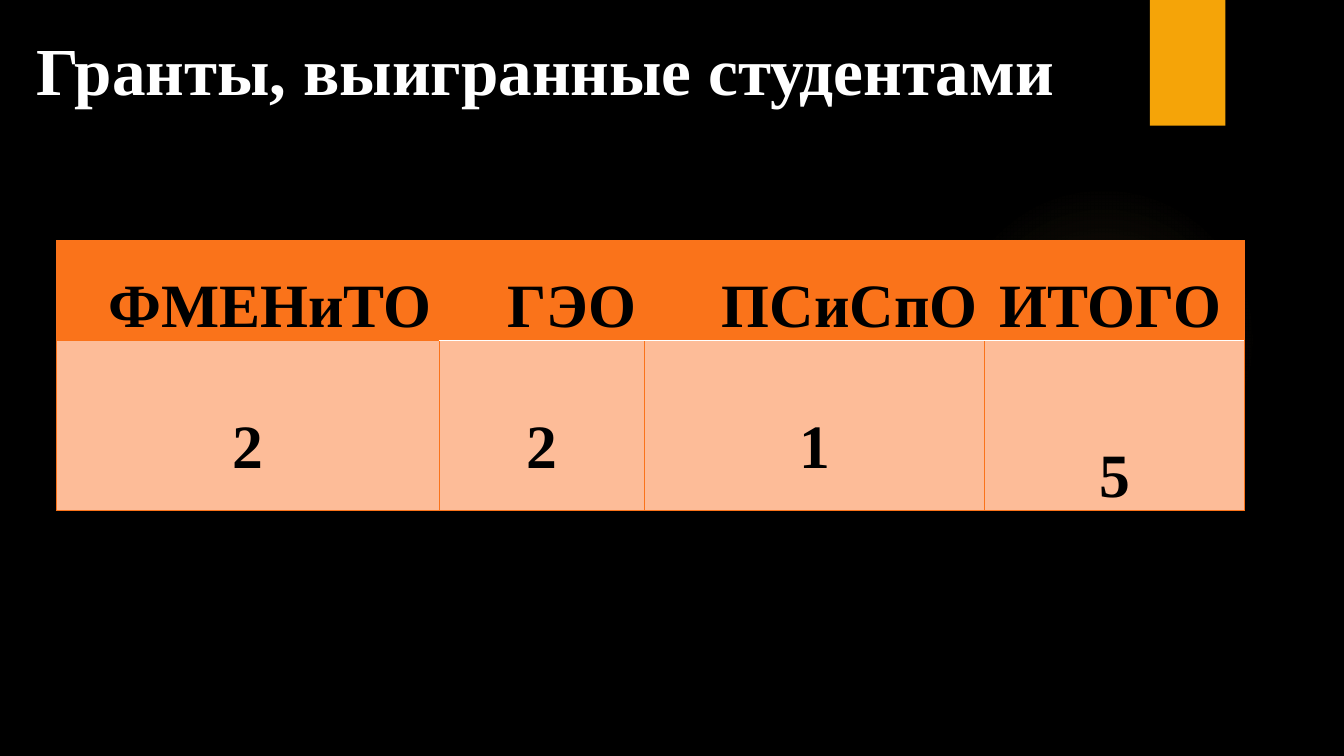
from dataclasses import dataclass
from typing import Any

from lxml.etree import SubElement
from pptx import Presentation
from pptx.dml.color import RGBColor
from pptx.enum.shapes import MSO_SHAPE as Preset
from pptx.enum.text import MSO_ANCHOR as Anchor, PP_ALIGN as Align
from pptx.oxml.ns import qn
from pptx.util import Cm, Pt

FONT = "Times New Roman"
ORANGE, PEACH, AMBER, GLOW = "FA731A", "FDBC98", "F5A408", "FAC96A"
BLACK, WHITE = "000000", "FFFFFF"


@dataclass
class GrantColumn:
    heading: str
    count: str
    width: float
    rule: tuple[str, float] = (WHITE, 1.5)
    lift: float = 0.73


COLUMNS = [
    GrantColumn("ФМЕНиТО", "2", 9.65, rule=(ORANGE, 0.75)),
    GrantColumn("ГЭО", "2", 5.16),
    GrantColumn("ПСиСпО", "1", 8.59),
    GrantColumn("ИТОГО ", "5", 6.53, lift=0),
]
ROW_HEIGHTS = [2.51, 4.29]


def colour(value: str) -> RGBColor:
    return RGBColor.from_string(value)


def apply(target: Any, values: dict[str, Any]) -> None:
    for name, value in values.items():
        setattr(target, name, value)


def write(frame: Any, text: str, size: float, ink: str, layout: dict[str, Any]) -> None:
    para = frame.paragraphs[0]
    apply(para, layout)
    span = para.add_run()
    span.text = text
    apply(span.font, {"name": FONT, "size": Pt(size), "bold": True})
    span.font.color.rgb = colour(ink)


def add_plain_shape(page: Any, preset: Any, left: float, top: float,
                    width: float, height: float) -> Any:
    shape = page.shapes.add_shape(preset, Cm(left), Cm(top), Cm(width), Cm(height))
    shape.shadow.inherit = False
    shape.line.fill.background()
    return shape


def add_glow(page: Any) -> None:
    glow = add_plain_shape(page, Preset.OVAL, 23.9, 4.65, 7.82, 7.82)
    glow.fill.gradient()
    gradient = glow.element.spPr.find(qn("a:gradFill"))
    for child in list(gradient):
        gradient.remove(child)
    stops = SubElement(gradient, qn("a:gsLst"))
    for position, alpha in ((0, 7), (36, 6), (69, 0)):
        stop = SubElement(stops, qn("a:gs"), pos=str(position * 1000))
        tone = SubElement(stop, qn("a:srgbClr"), val=GLOW)
        SubElement(tone, qn("a:alpha"), val=str(alpha * 1000))
    circle = SubElement(gradient, qn("a:path"), path="circle")
    SubElement(circle, qn("a:fillToRect"), {side: "50000" for side in "ltrb"})


def set_borders(cell: Any, **special: tuple[str, float]) -> None:
    properties = cell._tc.get_or_add_tcPr()
    for side in "LRTB":
        ink, width = special.get(side, (ORANGE, 0.75))
        line = SubElement(properties, qn(f"a:ln{side}"), w=str(Pt(width)))
        fill = SubElement(line, qn("a:solidFill"))
        SubElement(fill, qn("a:srgbClr"), val=ink)


def fill_cell(cell: Any, text: str, back: str, align: Any, lift: float = 0) -> None:
    cell.fill.solid()
    cell.fill.fore_color.rgb = colour(back)
    apply(cell, {"vertical_anchor": Anchor.BOTTOM, "margin_left": Cm(0.18),
                 "margin_right": Cm(0.18), "margin_top": 0, "margin_bottom": Cm(lift)})
    write(cell.text_frame, text, 44, BLACK, {"alignment": align, "line_spacing": 1.07})


def add_grants_table(page: Any) -> None:
    width = sum(column.width for column in COLUMNS)
    table = page.shapes.add_table(len(ROW_HEIGHTS), len(COLUMNS), Cm(1.42), Cm(6.07),
                                  Cm(width), Cm(sum(ROW_HEIGHTS))).table
    for row, height in zip(table.rows, ROW_HEIGHTS):
        row.height = Cm(height)
    for index, column in enumerate(COLUMNS):
        table.columns[index].width = Cm(column.width)
        heading, count = table.cell(0, index), table.cell(1, index)
        set_borders(heading, B=column.rule)
        set_borders(count, T=column.rule)
        fill_cell(heading, column.heading, ORANGE, Align.RIGHT)
        fill_cell(count, column.count, PEACH, Align.CENTER, column.lift)


def main() -> None:
    deck = Presentation()
    apply(deck, {"slide_width": Cm(33.87), "slide_height": Cm(19.05)})
    page = deck.slides.add_slide(deck.slide_layouts[5])
    page.background.fill.solid()
    page.background.fill.fore_color.rgb = colour(BLACK)

    # Background decoration
    add_glow(page)
    bar = add_plain_shape(page, Preset.RECTANGLE, 28.98, 0, 1.9, 3.17)
    bar.fill.solid()
    bar.fill.fore_color.rgb = colour(AMBER)

    # Grants by faculty
    add_grants_table(page)

    # Title
    title = page.shapes.title
    apply(title, {"left": Cm(0.66), "top": Cm(0.36), "width": Cm(27.84), "height": Cm(3.89)})
    apply(title.text_frame, {"vertical_anchor": Anchor.TOP, "margin_top": Cm(0.36),
                             "word_wrap": True})
    write(title.text_frame, "Гранты, выигранные студентами", 48, WHITE,
          {"alignment": Align.LEFT})

    deck.save("out.pptx")


if __name__ == "__main__":
    main()
